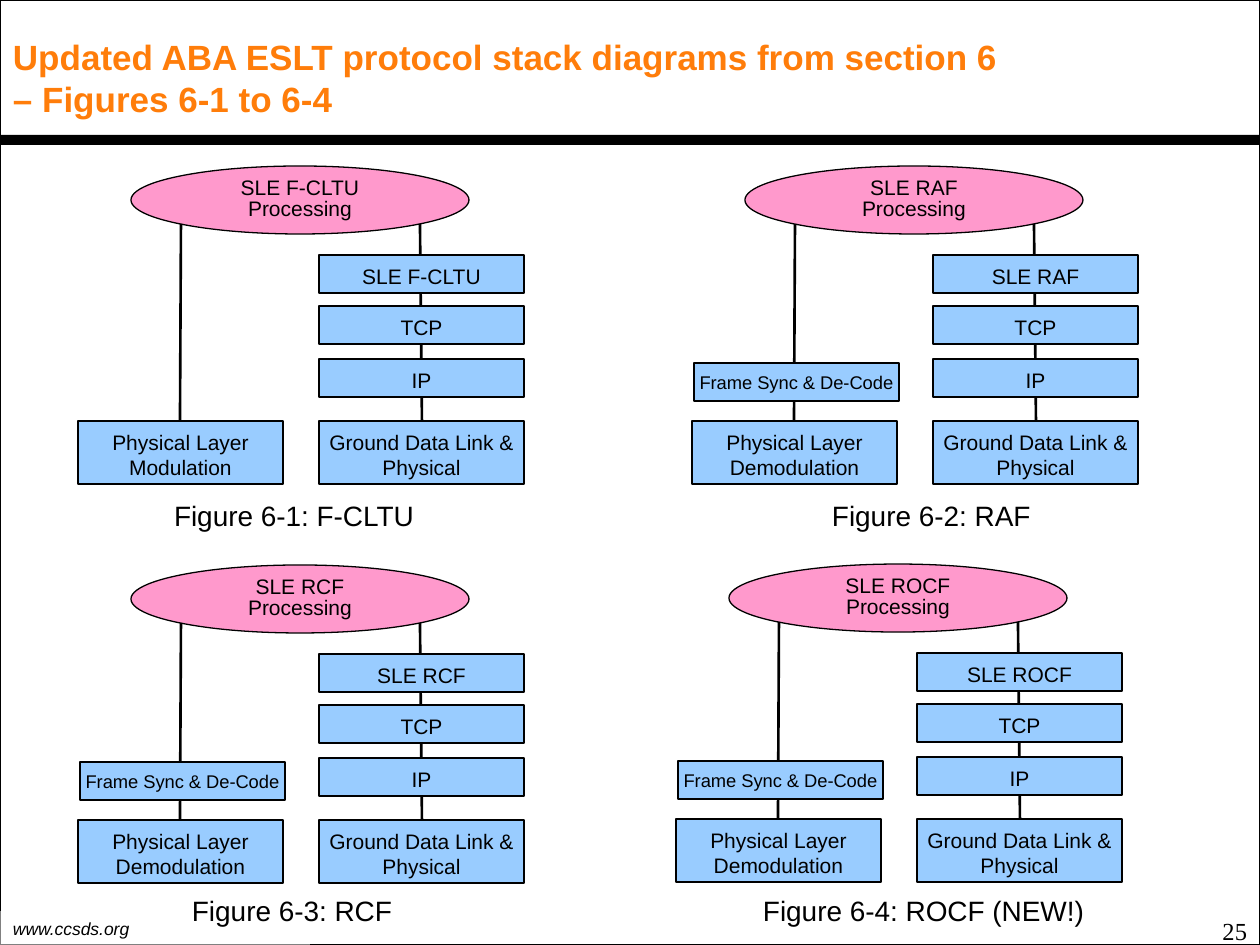
from dataclasses import dataclass

from lxml import etree
from pptx import Presentation
from pptx.dml.color import RGBColor
from pptx.enum.shapes import MSO_CONNECTOR, MSO_SHAPE
from pptx.enum.text import MSO_ANCHOR, PP_ALIGN
from pptx.oxml.ns import qn
from pptx.util import Emu, Pt

RECTANGLE = MSO_SHAPE.RECTANGLE
OVAL = MSO_SHAPE.OVAL
STRAIGHT = MSO_CONNECTOR.STRAIGHT
LEFT, CENTER, RIGHT = PP_ALIGN.LEFT, PP_ALIGN.CENTER, PP_ALIGN.RIGHT
TOP, MIDDLE = MSO_ANCHOR.TOP, MSO_ANCHOR.MIDDLE
EMU_PER_PX = 914400 / 126


@dataclass(frozen=True)
class Theme:
    black: str = "000000"
    white: str = "FFFFFF"
    orange: str = "FF7D0A"
    pink: str = "FF99CC"
    blue: str = "99CCFF"
    sans: str = "Arial"
    serif: str = "Times New Roman"
    title: float = 20
    caption: float = 16
    number: float = 14
    label: float = 12
    small: float = 10.5
    footer: float = 10
    outline: float = 0.75
    border: float = 1
    link: float = 1.5


THEME = Theme()


@dataclass(frozen=True)
class Rect:
    left: int
    top: int
    width: int
    height: int


@dataclass(frozen=True)
class TextStyle:
    size: float
    color: str = THEME.black
    font: str = THEME.sans
    bold: bool = False
    italic: bool = False
    align: PP_ALIGN = LEFT
    anchor: MSO_ANCHOR = TOP
    insets: tuple[int, int, int, int] = (13, 6, 13, 6)
    spacing: float = 1.0


@dataclass(frozen=True)
class Stack:
    left: int
    top: int
    service: str
    physical: str
    frame_sync: bool
    caption: str
    caption_left: int
    caption_top: int


TITLE = TextStyle(THEME.title, THEME.orange, bold=True, anchor=MIDDLE)
FOOTER = TextStyle(THEME.footer, italic=True, anchor=MIDDLE)
NUMBER = TextStyle(THEME.number, font=THEME.serif, align=RIGHT)
CAPTION = TextStyle(THEME.caption)
PROCESS = TextStyle(THEME.label, align=CENTER, anchor=MIDDLE,
                    insets=(0, 0, 0, 0), spacing=0.8)
LAYER = TextStyle(THEME.label, align=CENTER, anchor=MIDDLE, insets=(5, 4, 5, 0))
SYNC = TextStyle(THEME.small, align=CENTER, anchor=MIDDLE, insets=(0, 0, 0, 0))

STACKS = (
    Stack(78, 166, "SLE F-CLTU", "Physical Layer Modulation", False,
          "Figure 6-1: F-CLTU", 161, 493),
    Stack(692, 166, "SLE RAF", "Physical Layer Demodulation", True,
          "Figure 6-2: RAF", 819, 493),
    Stack(78, 565, "SLE RCF", "Physical Layer Demodulation", True,
          "Figure 6-3: RCF", 179, 888),
    Stack(676, 564, "SLE ROCF", "Physical Layer Demodulation", True,
          "Figure 6-4: ROCF (NEW!)", 750, 888),
)
LAYER_WIDTH, LAYER_HEIGHT, BASE_HEIGHT = 205, 38, 63
COLUMN, BASE, LINK_TOP = 241, 255, 58


def px(value: int) -> Emu:
    return Emu(round(value * EMU_PER_PX))


def write(box, lines: tuple[str, ...], style: TextStyle) -> None:
    frame = box.text_frame
    frame.word_wrap = True
    frame.vertical_anchor = style.anchor
    (frame.margin_left, frame.margin_top,
     frame.margin_right, frame.margin_bottom) = map(px, style.insets)
    for index, line in enumerate(lines):
        para = frame.add_paragraph() if index else frame.paragraphs[0]
        para.alignment = style.align
        para.line_spacing = style.spacing
        span = para.add_run()
        span.text = line
        span.font.name = style.font
        span.font.size = Pt(style.size)
        span.font.bold = style.bold
        span.font.italic = style.italic
        span.font.color.rgb = RGBColor.from_string(style.color)


def add_text(page, rect: Rect, text: str, style: TextStyle) -> None:
    box = page.shapes.add_textbox(px(rect.left), px(rect.top),
                                  px(rect.width), px(rect.height))
    write(box, (text,), style)


def add_block(page, rect: Rect, fill: str | None, line: float = 0,
              kind: MSO_SHAPE = RECTANGLE):
    box = page.shapes.add_shape(kind, px(rect.left), px(rect.top),
                                px(rect.width), px(rect.height))
    box.shadow.inherit = False
    if fill:
        box.fill.solid()
        box.fill.fore_color.rgb = RGBColor.from_string(fill)
    else:
        box.fill.background()
    if line:
        box.line.color.rgb = RGBColor.from_string(THEME.black)
        box.line.width = Pt(line)
    else:
        box.line.fill.background()
    return box


def add_layer(page, rect: Rect, text: str, style: TextStyle = LAYER) -> None:
    write(add_block(page, rect, THEME.blue, THEME.outline), (text,), style)


def add_link(page, start: int, end: int, top: int, bottom: int) -> None:
    link = page.shapes.add_connector(STRAIGHT, px(start), px(top), px(end), px(bottom))
    link.line.color.rgb = RGBColor.from_string(THEME.black)
    link.line.width = Pt(THEME.link)
    etree.SubElement(link._element.spPr, qn("a:effectLst"))


def add_stack(page, stack: Stack) -> None:
    left, top = stack.left, stack.top
    process = add_block(page, Rect(left + 53, top, 338, 68), THEME.pink,
                        THEME.outline, OVAL)
    write(process, (stack.service, "Processing"), PROCESS)
    for start, end in ((103, 102), (342, 344)):
        add_link(page, left + start, left + end, top + LINK_TOP, top + BASE)
    for offset, text in ((89, stack.service), (140, "TCP"), (193, "IP")):
        add_layer(page, Rect(left + COLUMN, top + offset, LAYER_WIDTH, LAYER_HEIGHT), text)
    for offset, text in ((0, stack.physical), (COLUMN, "Ground Data Link & Physical")):
        add_layer(page, Rect(left + offset, top + BASE, LAYER_WIDTH, BASE_HEIGHT), text)
    if stack.frame_sync:
        add_layer(page, Rect(left + 2, top + 197, LAYER_WIDTH, LAYER_HEIGHT),
                  "Frame Sync & De-Code", SYNC)
    add_text(page, Rect(stack.caption_left, stack.caption_top, 370, 47),
             stack.caption, CAPTION)


def add_frame(page) -> None:
    add_block(page, Rect(0, 0, 1260, 945), None, THEME.border)
    footer = add_block(page, Rect(0, 911, 310, 34), THEME.white)
    color = footer._element.spPr.find(qn("a:solidFill"))[0]
    etree.SubElement(color, qn("a:alpha"), val="50000")
    write(footer, ("www.ccsds.org",), FOOTER)
    add_block(page, Rect(0, 135, 1260, 10), THEME.black)
    add_text(page, Rect(0, 35, 1023, 85),
             "Updated ABA ESLT protocol stack diagrams from section 6 – Figures 6-1 to 6-4",
             TITLE)
    add_text(page, Rect(966, 910, 294, 35), "25", NUMBER)


def main() -> None:
    deck = Presentation()
    deck.slide_width, deck.slide_height = px(1260), px(945)
    page = deck.slides.add_slide(deck.slide_layouts[6])
    add_frame(page)
    for stack in STACKS:
        add_stack(page, stack)
    deck.save("out.pptx")


if __name__ == "__main__":
    main()
